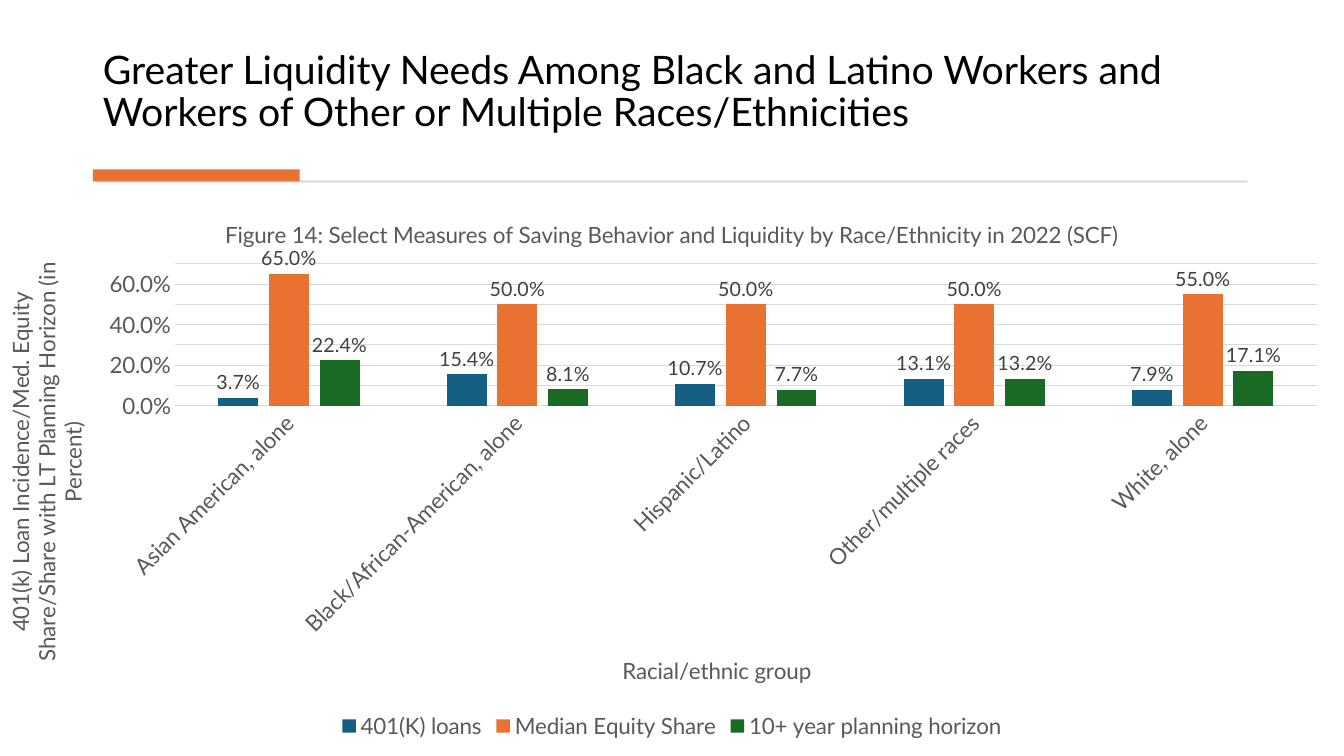
from dataclasses import dataclass
from lxml.etree import SubElement
from pptx import Presentation
from pptx.chart.data import CategoryChartData as Data
from pptx.dml.color import RGBColor as Color
from pptx.enum.chart import XL_CHART_TYPE as Kind, XL_LABEL_POSITION as Place
from pptx.enum.chart import XL_LEGEND_POSITION as Side, XL_TICK_MARK as Tick
from pptx.enum.shapes import MSO_SHAPE as Shape
from pptx.enum.text import MSO_ANCHOR as Anchor, MSO_AUTO_SIZE as Fit, PP_ALIGN as Align
from pptx.oxml.ns import qn
from pptx.util import Cm, Pt


@dataclass(frozen=True)
class Theme:
    face: str = "Lato"
    black: str = "000000"
    gray: str = "595959"
    dark: str = "404040"
    grid: str = "D9D9D9"
    rule: str = "D5D5D5"
    blue: str = "156082"
    orange: str = "E97132"
    green: str = "196B24"
    head: int = 28
    body: int = 16
    label: int = 14


THEME = Theme()
GROUPS = ["Asian American, alone", "Black/African-American, alone",
          "Hispanic/Latino", "Other/multiple races", "White, alone"]
SERIES = [
    ("401(K) loans", THEME.blue, (0.037, 0.154, 0.107, 0.131, 0.079)),
    ("Median Equity Share", THEME.orange, (0.65, 0.5, 0.5, 0.5, 0.55)),
    ("10+ year planning horizon", THEME.green, (0.224, 0.081, 0.077, 0.132, 0.171)),
]


def style(font, size, color):
    font.name = THEME.face
    font.size = Pt(size)
    font.bold = False
    font.color.rgb = Color.from_string(color)


def add_bar(slide, left, top, width, height, color):
    bar = slide.shapes.add_shape(Shape.RECTANGLE, Cm(left), Cm(top), Cm(width), Cm(height))
    bar.shadow.inherit = False
    bar.fill.solid()
    bar.fill.fore_color.rgb = Color.from_string(color)
    bar.line.fill.background()


def add_head(slide, left, top, width, height):
    title = slide.shapes.title
    title.left, title.top, title.width, title.height = map(Cm, (left, top, width, height))
    frame = title.text_frame
    frame.text = ("Greater Liquidity Needs Among Black and Latino Workers "
                  "and Workers of Other or Multiple Races/Ethnicities")
    frame.word_wrap = True
    frame.auto_size = Fit.NONE
    frame.vertical_anchor = Anchor.BOTTOM
    para = frame.paragraphs[0]
    para.alignment = Align.LEFT
    para.line_spacing = 0.9
    style(para.runs[0].font, THEME.head, THEME.black)
    add_bar(slide, left + 0.07, top + 3.84, width - 0.15, 0.05, THEME.rule)
    add_bar(slide, left, top + 3.56, 5.21, 0.3, THEME.orange)


def set_title(item, text):
    frame = item.text_frame
    frame.text = text
    style(frame.paragraphs[0].runs[0].font, THEME.body, THEME.gray)


def set_spot(node, index, **spot):
    for old in node.findall(qn("c:layout")):
        node.remove(old)
    layout = node.makeelement(qn("c:layout"))
    node.insert(index, layout)
    manual = SubElement(layout, qn("c:manualLayout"))
    if "w" in spot:
        SubElement(manual, qn("c:layoutTarget")).set("val", "inner")
    for key in "xy":
        SubElement(manual, qn(f"c:{key}Mode")).set("val", "edge")
    for key, value in spot.items():
        SubElement(manual, qn(f"c:{key}")).set("val", str(value))


def set_axes(chart):
    groups, values = chart.category_axis, chart.value_axis
    for axis in (groups, values):
        axis.major_tick_mark = axis.minor_tick_mark = Tick.NONE
        style(axis.tick_labels.font, THEME.body, THEME.gray)
    set_title(groups.axis_title, "Racial/ethnic group")
    set_title(values.axis_title, "401(k) Loan Incidence/Med. Equity Share/"
              "Share with LT Planning Horizon (in Percent)")
    values.minimum_scale, values.maximum_scale, values.major_unit = 0, 0.7, 0.1
    values.tick_labels.number_format = "0.0%"
    values.tick_labels.number_format_is_linked = False
    values.format.line.fill.background()
    groups.has_major_gridlines = False
    for line in (groups.format.line, values.major_gridlines.format.line):
        line.color.rgb = Color.from_string(THEME.grid)
        line.width = Pt(0.75)


def set_bars(plot):
    plot.gap_width = 219
    plot.overlap = -27
    plot.vary_by_categories = False
    for series, (_, color, _) in zip(plot.series, SERIES):
        series.format.fill.solid()
        series.format.fill.fore_color.rgb = Color.from_string(color)
        labels = series.data_labels
        labels.show_value = True
        labels.position = Place.OUTSIDE_END
        labels.number_format = "0.0%"
        labels.number_format_is_linked = False
        style(labels.font, THEME.label, THEME.dark)


def add_plot(slide, left, top, width, height):
    data = Data(number_format="0.0%")
    data.categories = GROUPS
    for name, _, values in SERIES:
        data.add_series(name, values)
    chart = slide.shapes.add_chart(Kind.COLUMN_CLUSTERED, Cm(left), Cm(top),
                                   Cm(width), Cm(height), data).chart
    style(chart.font, 10, THEME.black)
    set_title(chart.chart_title, "Figure 14: Select Measures of Saving Behavior "
              "and Liquidity by Race/Ethnicity in 2022 (SCF)")
    chart.has_legend = True
    chart.legend.position = Side.BOTTOM
    chart.legend.include_in_layout = False
    style(chart.legend.font, THEME.body, THEME.gray)
    set_axes(chart)
    set_bars(chart.plots[0])
    root = chart.element if hasattr(chart, "element") else chart._chartSpace
    area = root.find(f".//{qn('c:plotArea')}")
    set_spot(area, 0, x=0.13, y=0.12, w=0.85, h=0.26)
    groups = area.find(qn("c:catAx"))
    values = area.find(qn("c:valAx"))
    set_spot(groups.find(qn("c:title")), 1, x=0.46, y=0.83)
    set_spot(values.find(qn("c:title")), 1, x=0.01, y=0.09)
    groups.find(f"{qn('c:txPr')}/{qn('a:bodyPr')}").set("rot", "-2700000")
    turn = values.find(f"{qn('c:title')}//{qn('a:bodyPr')}")
    turn.set("rot", "-5400000")
    turn.set("vert", "horz")


def main():
    deck = Presentation()
    deck.slide_width, deck.slide_height = Cm(33.87), Cm(19.05)
    slide = deck.slides.add_slide(deck.slide_layouts[5])
    add_head(slide, 2.34, 0.71, 29.18, 2.82)
    add_plot(slide, 0, 5, 33.87, 13.74)
    deck.save("out.pptx")


if __name__ == "__main__":
    main()
